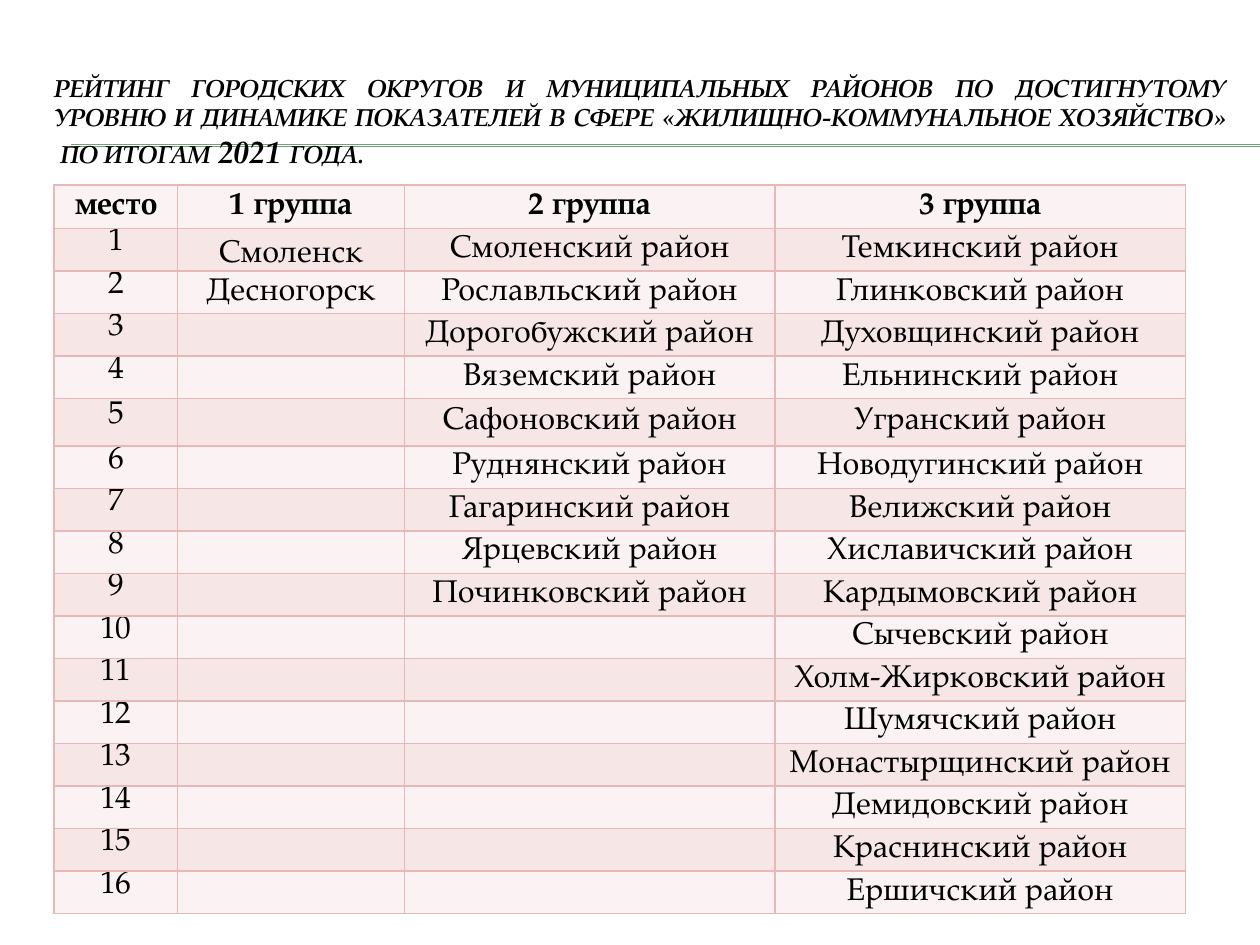
from lxml import etree
from pptx import Presentation, util as u
from pptx.dml.color import RGBColor
from pptx.enum import shapes, text
from pptx.oxml import parse_xml
from pptx.oxml.ns import nsdecls, qn

BLACK = RGBColor(0x00, 0x00, 0x00)
GREEN = RGBColor(0x72, 0xA3, 0x76)
LIGHT = RGBColor(0xFB, 0xF3, 0xF3)
PINK = RGBColor(0xF6, 0xE6, 0xE6)
EDGE = RGBColor(0xE8, 0xB7, 0xB7)

HEAD = ["место", "1 группа", "2 группа", "3 группа"]
CITIES = ["Смоленск", "Десногорск"]
SECOND = ["Смоленский", "Рославльский", "Дорогобужский", "Вяземский", "Сафоновский",
          "Руднянский", "Гагаринский", "Ярцевский", "Починковский"]
THIRD = ["Темкинский", "Глинковский", "Духовщинский", "Ельнинский", "Угранский",
         "Новодугинский", "Велижский", "Хиславичский", "Кардымовский", "Сычевский",
         "Холм-Жирковский", "Шумячский", "Монастырщинский", "Демидовский",
         "Краснинский", "Ершичский"]
TITLE = [
    ("РЕЙТИНГ ГОРОДСКИХ ОКРУГОВ И МУНИЦИПАЛЬНЫХ РАЙОНОВ ПО ДОСТИГНУТОМУ УРОВНЮ "
     "И ДИНАМИКЕ ПОКАЗАТЕЛЕЙ В СФЕРЕ «ЖИЛИЩНО-КОММУНАЛЬНОЕ ХОЗЯЙСТВО»", 14),
    None,
    (" ПО ИТОГАМ", 14), (" 2021 ", 18), ("ГОДА.", 14),
]


class Page:
    """Style and current slide; lengths are percent of the slide's size."""
    face = "TeX Gyre Pagella"
    size = u.Pt(18)

    def __init__(self, deck):
        self.wide, self.high = deck.slide_width, deck.slide_height
        self.slide = deck.slides.add_slide(deck.slide_layouts[6])

    def x(self, part):
        return round(self.wide * part / 100)

    def y(self, part):
        return round(self.high * part / 100)

    def box(self, left, top, width, height):
        return self.x(left), self.y(top), self.x(width), self.y(height)

    def style(self, para, align, bold=False, italic=False):
        para.alignment = align
        font = para.font
        font.name, font.size, font.color.rgb = self.face, self.size, BLACK
        font.bold, font.italic = bold, italic

    def rule(self, left, right, top):
        line = self.slide.shapes.add_connector(
            shapes.MSO_CONNECTOR.STRAIGHT,
            self.x(left), self.y(top), self.x(right), self.y(top))
        line.line.color.rgb, line.line.width = GREEN, u.Pt(0.75)
        etree.SubElement(line._element.spPr, qn("a:effectLst"))

    def title(self, parts, *place):
        frame = self.slide.shapes.add_textbox(*self.box(*place)).text_frame
        frame.word_wrap = True
        frame.vertical_anchor = text.MSO_ANCHOR.MIDDLE
        para = frame.paragraphs[0]
        self.style(para, text.PP_ALIGN.JUSTIFY, bold=True, italic=True)
        for part in parts:
            if part is None:
                para.add_line_break()
                continue
            run = para.add_run()
            run.text, size = part
            run.font.size = u.Pt(size)

    def cell(self, cell, words, fill, bold=False, rank=False):
        """Fill one cell; a rank has tight line spacing and default insets."""
        for side in "LRTB":
            cell._tc.get_or_add_tcPr().append(parse_xml(
                f'<a:ln{side} {nsdecls("a")} w="12700"><a:solidFill>'
                f'<a:srgbClr val="{EDGE}"/></a:solidFill></a:ln{side}>'))
        cell.fill.solid()
        cell.fill.fore_color.rgb = fill
        cell.vertical_anchor = text.MSO_ANCHOR.MIDDLE
        para = cell.text_frame.paragraphs[0]
        if rank:
            para.line_spacing = u.Pt(11)
        else:
            cell.margin_left = cell.margin_right = cell.margin_top = u.Inches(0.01)
            cell.margin_bottom = 0
        self.style(para, text.PP_ALIGN.CENTER, bold)
        if words:
            para.add_run().text = words

    def table(self, rows, left, top, cols, lines):
        grid = self.slide.shapes.add_table(
            len(rows), len(cols), *self.box(left, top, sum(cols), sum(lines))).table
        grid.first_row = grid.horz_banding = False
        for col, width in zip(grid.columns, cols):
            col.width = self.x(width)
        for r, (row, height) in enumerate(zip(rows, lines)):
            grid.rows[r].height = self.y(height)
            for c, words in enumerate(row):
                self.cell(grid.cell(r, c), words, PINK if r % 2 else LIGHT,
                          bold=r == 0, rank=r > 0 and c == 0)
        return grid


def ranks():
    """Header row, then one row per place, blank where a group has ended."""
    groups = [CITIES] + [[f"{name} район" for name in names] for names in (SECOND, THIRD)]
    rows = [HEAD]
    for i in range(len(THIRD)):
        rows.append([str(i + 1)] + [g[i] if i < len(g) else "" for g in groups])
    return rows


def main():
    deck = Presentation()
    deck.slide_width, deck.slide_height = u.Inches(10), u.Inches(7.5)
    page = Page(deck)
    for top in (15.33, 15.47):
        page.rule(5.6, 100, top)
    page.title(TITLE, 3.3, 6.67, 95, 12.27)
    rows = ranks()
    lines = [4.5] * len(rows)
    lines[0], lines[5] = 4.6, 5
    grid = page.table(rows, 4.3, 19.6, [9.8, 18, 29.4, 32.6], lines)
    grid.cell(1, 1).vertical_anchor = text.MSO_ANCHOR.BOTTOM
    deck.save("out.pptx")


if __name__ == "__main__":
    main()
